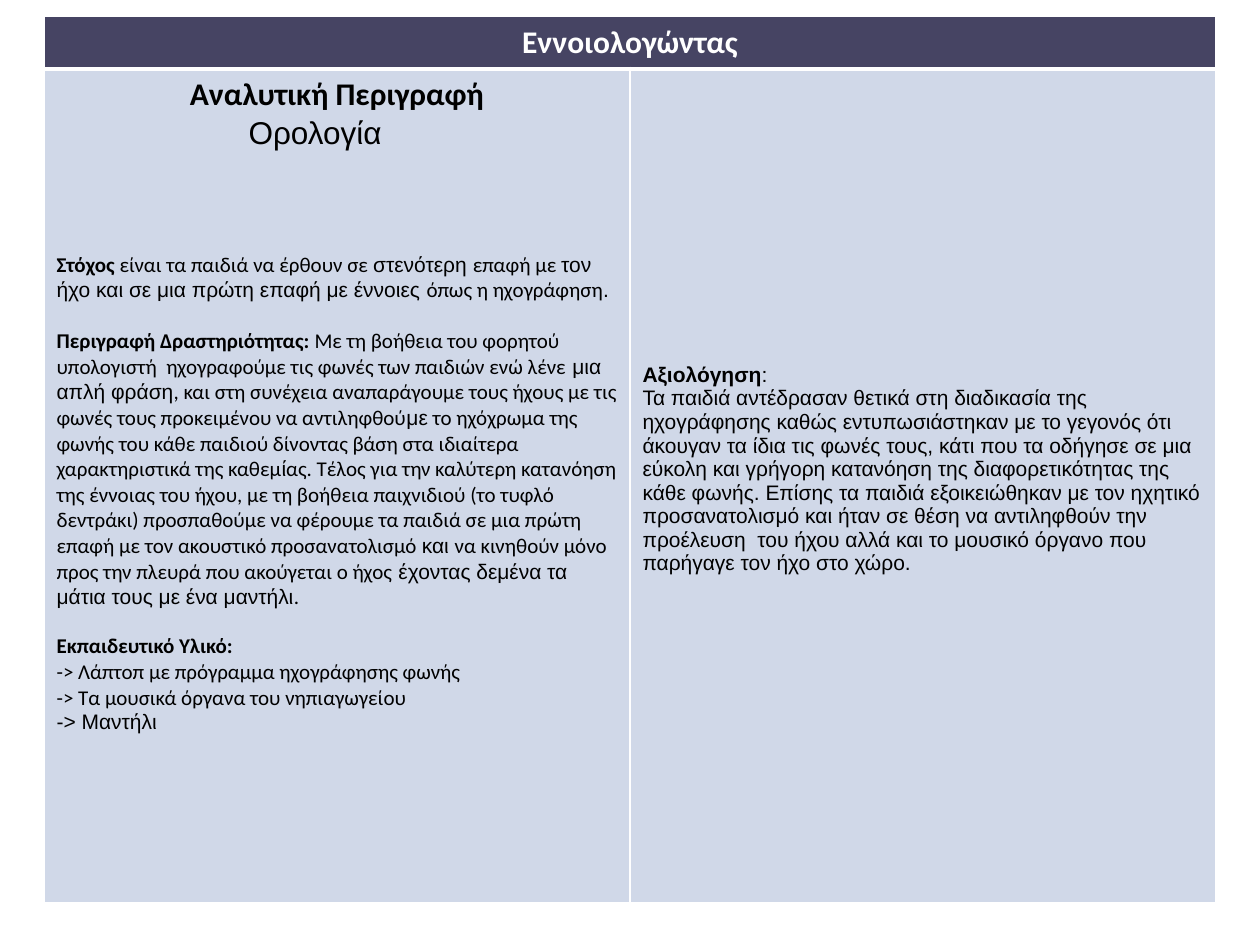
from dataclasses import dataclass

from pptx import Presentation
from pptx.dml.color import RGBColor as Rgb
from pptx.enum.text import MSO_ANCHOR as Anchor, PP_ALIGN as Align
from pptx.oxml.ns import qn
from pptx.oxml.xmlchemy import OxmlElement as Element
from pptx.util import Emu, Inches, Pt

PX = Inches(1) // 126


@dataclass(frozen=True)
class Theme:
    header: str = "18163D"
    header_opacity: int = 80
    body: str = "D0D8E8"
    rule: str = "FFFFFF"
    light: str = "FFFFFF"
    dark: str = "000000"
    title_size: int = 18
    text_size: int = 12
    thin: int = 1
    thick: int = 3


THEME = Theme()
PLAIN = {"name": "Calibri", "bold": False}
BOLD = {"name": "Calibri", "bold": True}
ARIAL = {"name": "Arial", "bold": False}
ARIAL_BOLD = {"name": "Arial", "bold": True}


def para(*spans, size=THEME.text_size, indent=0, **formats):
    """Describe a paragraph: styled spans, type size, left indent in px, formats."""
    return {"spans": spans, "size": size, "indent": indent, "formats": formats}


HEADER = [para((BOLD, "Εννοιολογώντας"), size=THEME.title_size, alignment=Align.CENTER)]

DESCRIPTION = [
    para((BOLD, "Αναλυτική Περιγραφή"), size=THEME.title_size, alignment=Align.CENTER),
    para((ARIAL, "Ορολογία"), size=THEME.title_size, indent=192, space_before=Pt(1)),
    para(
        (BOLD, "Στόχος"),
        (PLAIN, " είναι τα παιδιά να έρθουν σε "),
        (ARIAL, "στενότερη "),
        (PLAIN, "επαφή με "),
        (ARIAL, "τον ήχο και σε μια πρώτη επαφή με έννοιες "),
        (PLAIN, "όπως η ηχογράφηση"),
        (ARIAL, "."),
        space_before=Pt(58),
    ),
    para(
        (BOLD, "Περιγραφή Δραστηριότητας: "),
        (PLAIN, "Με τη βοήθεια του φορητού υπολογιστή  ηχογραφούμε τις φωνές "
                "των παιδιών ενώ λένε"),
        (ARIAL, " μια απλή φράση"),
        (PLAIN, ", και στη συνέχεια αναπαράγουμε τους ήχους με τις φωνές τους "
                "προκειμένου να αντιληφθού"),
        (ARIAL, "με"),
        (PLAIN, " το ηχόχρωμα της φωνής του κάθε παιδιού δίνοντας βάση στα "
                "ιδιαίτερα χαρακτηριστικά της καθεμ"),
        (ARIAL, "ί"),
        (PLAIN, "ας. Τέλος για την καλύτερη κατανόηση της έννοιας του ήχου, με τη "
                "βοήθεια παιχνιδιού (το τυφλό δεντράκι) προσπαθούμε να φέρουμε τα "
                "παιδιά σε μια πρώτη επαφή με τον ακουστικό προσανατολισμό "),
        (ARIAL, "και "),
        (PLAIN, "να κινηθούν μόνο προς την πλευρά που ακούγεται ο ήχος"),
        (ARIAL, " έχοντας δεμένα τα μάτια τους με ένα μαντήλι"),
        (PLAIN, "."),
        space_before=Pt(14.5),
    ),
    para((BOLD, "Εκπαιδευτικό Υλικό:"), space_before=Pt(13.5)),
    para((PLAIN, "-> Λάπτοπ με πρόγραμμα ηχογράφησης φωνής")),
    para((PLAIN, "-> Τα μουσικά όργανα του νηπιαγωγείου")),
    para((ARIAL, "-> Μαντήλι")),
]

EVALUATION = [
    para((ARIAL_BOLD, "Αξιολόγηση"), (ARIAL, ":")),
    para((ARIAL, "Τα παιδιά αντέδρασαν θετικά στη διαδικασία της ηχογράφησης καθώς "
                 "εντυπωσιάστηκαν με το γεγονός ότι άκουγαν τα ίδια τις φωνές τους, "
                 "κάτι που τα οδήγησε σε μια εύκολη και γρήγορη κατανόηση της "
                 "διαφορετικότητας της κάθε φωνής. Επίσης τα παιδιά εξοικειώθηκαν με "
                 "τον ηχητικό προσανατολισμό και ήταν σε θέση να αντιληφθούν την "
                 "προέλευση  του ήχου αλλά και το μουσικό όργανο που παρήγαγε τον ήχο "
                 "στο χώρο.")),
]


class Page:
    """A slide together with the theme its elements are drawn in."""

    def __init__(self, deck, theme):
        self.slide = deck.slides.add_slide(deck.slide_layouts[6])
        self.theme = theme

    def table(self, left, top, columns, rows):
        lengths = [Emu(n * PX) for n in (left, top, sum(columns), sum(rows))]
        frame = self.slide.shapes.add_table(len(rows), len(columns), *lengths)
        table = frame.table
        table.first_row = table.horz_banding = False
        for column, width in zip(table.columns, columns):
            column.width = Emu(width * PX)
        for row, height in zip(table.rows, rows):
            row.height = Emu(height * PX)
        return table

    def cell(self, cell, paragraphs, fill, color, borders, opacity=100, **formats):
        self.borders(cell, borders)
        cell.fill.solid()
        cell.fill.fore_color.rgb = Rgb.from_string(fill)
        if opacity < 100:
            alpha = Element("a:alpha")
            alpha.set("val", str(opacity * 1000))
            properties = cell._tc.get_or_add_tcPr()
            properties.find(f"{qn('a:solidFill')}/{qn('a:srgbClr')}").append(alpha)
        for name, value in formats.items():
            setattr(cell, name, value)
        self.text(cell.text_frame, paragraphs, color)

    def borders(self, cell, widths):
        """Rule the cell's left, right, top and bottom edges, widths in points."""
        properties = cell._tc.get_or_add_tcPr()
        for side, width in zip("LRTB", widths):
            line, fill, color = (
                Element(tag) for tag in (f"a:ln{side}", "a:solidFill", "a:srgbClr")
            )
            line.set("w", str(Pt(width)))
            color.set("val", self.theme.rule)
            fill.append(color)
            line.append(fill)
            properties.append(line)

    def text(self, frame, paragraphs, color):
        for index, content in enumerate(paragraphs):
            paragraph = frame.add_paragraph() if index else frame.paragraphs[0]
            for name, value in content["formats"].items():
                setattr(paragraph, name, value)
            if content["indent"]:
                paragraph._p.get_or_add_pPr().set("marL", str(content["indent"] * PX))
            for style, words in content["spans"]:
                span = paragraph.add_run()
                span.text = words
                span.font.color.rgb = Rgb.from_string(color)
                for name, value in {**style, "size": Pt(content["size"])}.items():
                    setattr(span.font, name, value)


def main():
    deck = Presentation()
    deck.slide_width, deck.slide_height = Inches(10), Inches(7.5)
    page = Page(deck, THEME)
    table = page.table(44, 16, columns=[586, 586], rows=[53, 834])

    thin, thick = THEME.thin, THEME.thick
    heading = table.cell(0, 0)
    heading.merge(table.cell(0, 1))
    page.cell(heading, HEADER, THEME.header, THEME.light, (thin, thin, thin, thick),
              opacity=THEME.header_opacity, vertical_anchor=Anchor.MIDDLE)

    body = {"fill": THEME.body, "color": THEME.dark, "borders": (thin, thin, thick, thin)}
    page.cell(table.cell(1, 0), DESCRIPTION, **body)
    page.cell(table.cell(1, 1), EVALUATION, **body,
              vertical_anchor=Anchor.MIDDLE, margin_bottom=Emu(40 * PX))
    deck.save("out.pptx")


if __name__ == "__main__":
    main()
